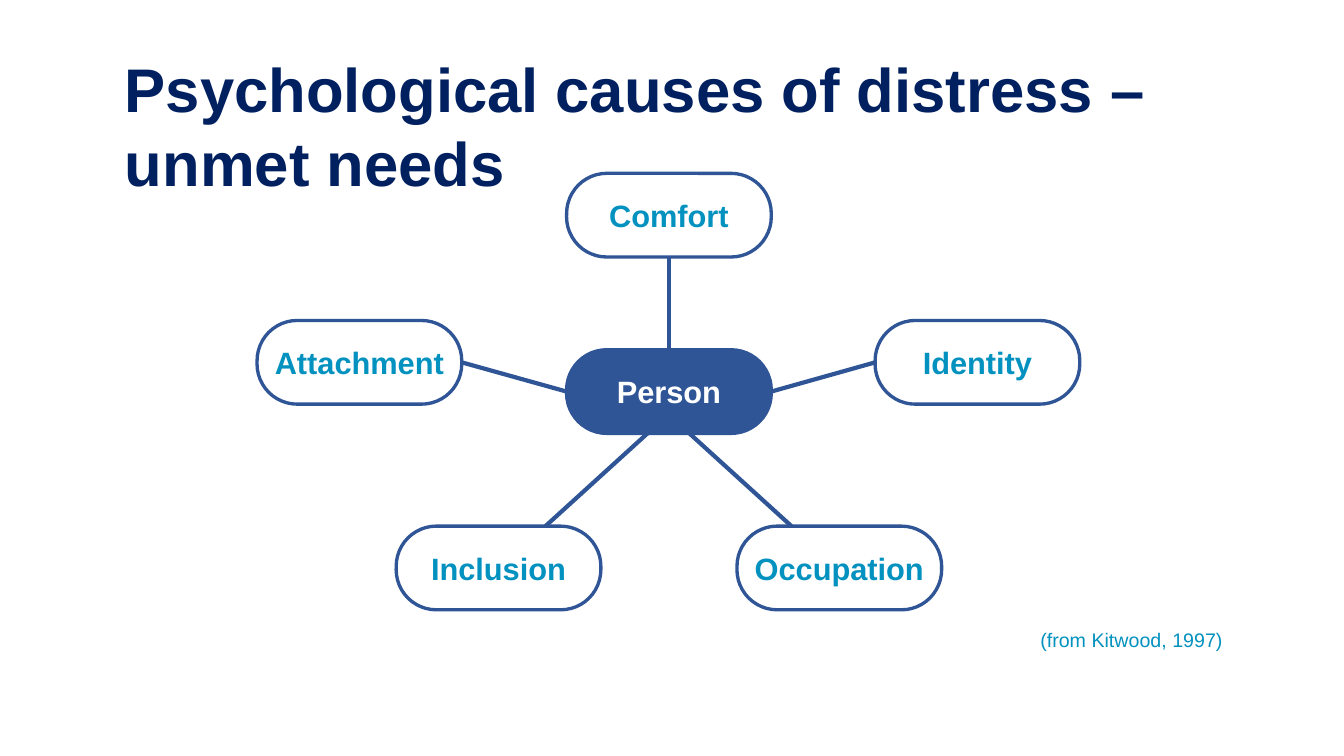
from lxml import etree
from pptx import Presentation
from pptx.dml.color import RGBColor
from pptx.enum.shapes import MSO_CONNECTOR, MSO_SHAPE
from pptx.enum.text import MSO_ANCHOR, PP_ALIGN
from pptx.oxml.ns import qn
from pptx.util import Inches, Pt

ROUNDED = MSO_SHAPE.ROUNDED_RECTANGLE
STRAIGHT = MSO_CONNECTOR.STRAIGHT
MIDDLE = MSO_ANCHOR.MIDDLE
CENTER = PP_ALIGN.CENTER
TOP, LEFT, BOTTOM, RIGHT = range(4)

THEME = {
    "font": "Arial",
    "navy": RGBColor(0x00, 0x20, 0x60),
    "blue": RGBColor(0x2F, 0x55, 0x97),
    "teal": RGBColor(0x03, 0x91, 0xBF),
    "white": RGBColor(0xFF, 0xFF, 0xFF),
    "title": Pt(44),
    "title_leading": Pt(53),
    "label": Pt(22),
    "source": Pt(14),
    "outline": Pt(2.38),
    "link": Pt(3),
}


def set_text(sp, text, size, color, bold):
    p = sp.text_frame.paragraphs[0]
    p.text = text
    font = p.runs[0].font
    font.name = THEME["font"]
    font.size = size
    font.bold = bold
    font.color.rgb = color
    return p


def add_link(x1, y1, x2, y2):
    link = s.shapes.add_connector(
        STRAIGHT, Inches(x1), Inches(y1), Inches(x2), Inches(y2))
    link.line.color.rgb = THEME["blue"]
    link.line.width = THEME["link"]
    etree.SubElement(link._element.spPr, qn("a:effectLst"))
    return link


prs = Presentation()
prs.slide_width = Inches(13.33)
prs.slide_height = Inches(7.5)
s = prs.slides.add_slide(prs.slide_layouts[6])

title = s.shapes.add_textbox(Inches(1.14), Inches(0.45), Inches(11.74), Inches(1.58))
title.text_frame.word_wrap = True
p = set_text(title, "Psychological causes of distress – unmet needs",
             THEME["title"], THEME["navy"], True)
p.line_spacing = THEME["title_leading"]

source = s.shapes.add_textbox(Inches(10.22), Inches(6.18), Inches(2.14), Inches(0.34))
set_text(source, "(from Kitwood, 1997)", THEME["source"], THEME["teal"], False)

NODE_W, NODE_H = 2.03, 0.83
nodes = {}
for name, x, y in [
    ("Comfort", 5.62, 1.72),
    ("Attachment", 2.55, 3.18),
    ("Identity", 8.68, 3.18),
    ("Inclusion", 3.93, 5.22),
    ("Occupation", 7.31, 5.22),
    ("Person", 5.62, 3.47),
]:
    is_person = name == "Person"
    sp = s.shapes.add_shape(
        ROUNDED, Inches(x), Inches(y), Inches(NODE_W), Inches(NODE_H))
    sp.adjustments[0] = 0.48
    sp.shadow.inherit = False
    if is_person:
        sp.fill.solid()
        sp.fill.fore_color.rgb = THEME["blue"]
    else:
        sp.fill.background()
    sp.line.color.rgb = THEME["blue"]
    sp.line.width = THEME["outline"]
    tf = sp.text_frame
    tf.word_wrap = False
    tf.vertical_anchor = MIDDLE
    tf.margin_left = tf.margin_right = 0
    p = set_text(sp, name, THEME["label"],
                 THEME["white"] if is_person else THEME["teal"], True)
    p.alignment = CENTER
    nodes[name] = sp

for need, need_side, person_side in [
    ("Comfort", BOTTOM, TOP),
    ("Identity", LEFT, RIGHT),
    ("Attachment", RIGHT, LEFT),
]:
    link = add_link(0, 0, 1, 1)
    link.begin_connect(nodes[need], need_side)
    link.end_connect(nodes["Person"], person_side)

for person_x, need_x in [(6.62, 5.41), (6.64, 7.85)]:
    add_link(person_x, 4.12, need_x, 5.22)

prs.save("out.pptx")
